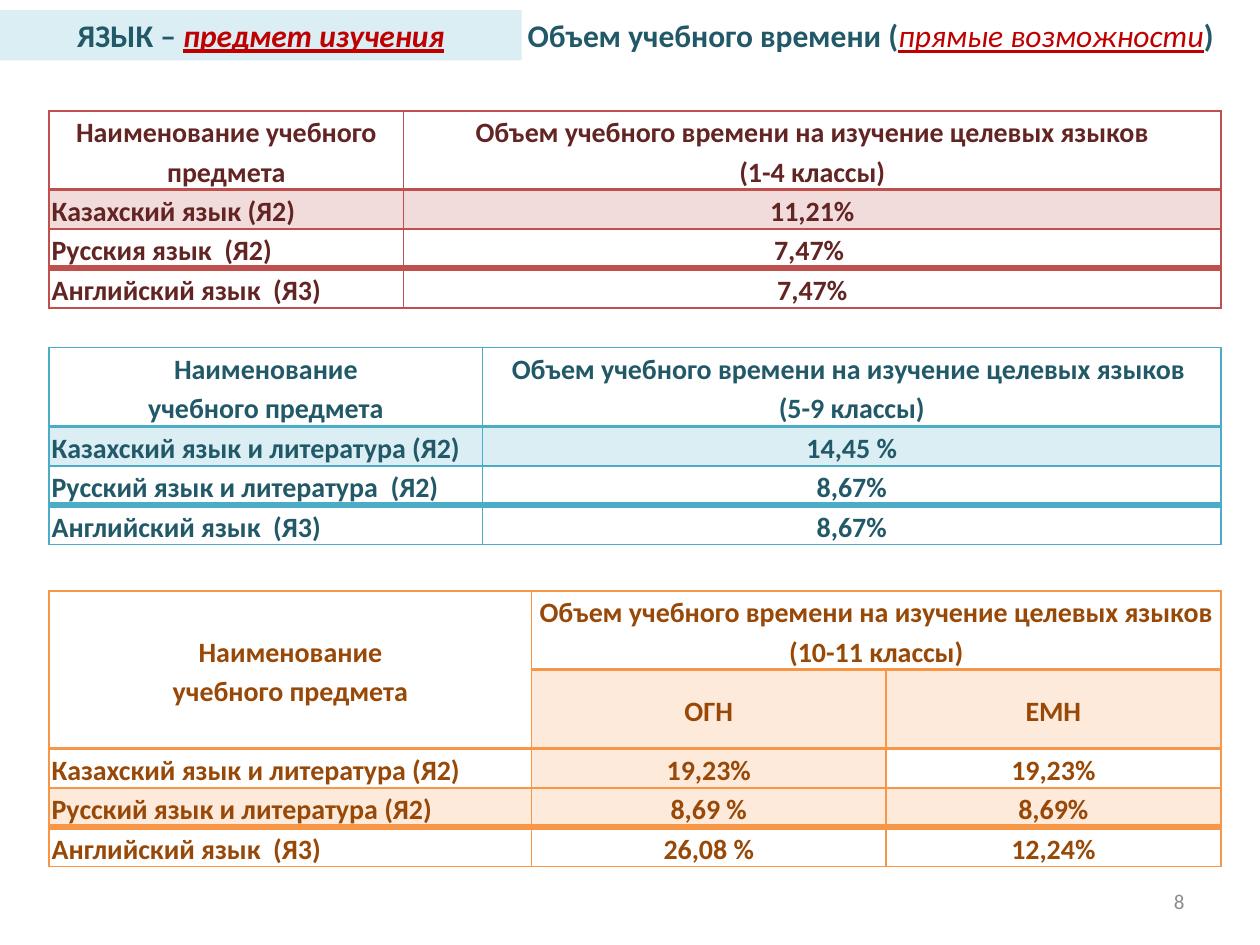
from dataclasses import dataclass

from lxml import etree
from pptx import Presentation
from pptx.dml.color import RGBColor
from pptx.enum.shapes import MSO_SHAPE
from pptx.enum.text import MSO_ANCHOR, PP_ALIGN
from pptx.oxml.ns import qn
from pptx.util import Inches, Pt

LEFT, CENTER, RIGHT = PP_ALIGN.LEFT, PP_ALIGN.CENTER, PP_ALIGN.RIGHT
TOP, MIDDLE = MSO_ANCHOR.TOP, MSO_ANCHOR.MIDDLE
RECTANGLE = MSO_SHAPE.RECTANGLE
TITLE_ONLY = 5


@dataclass(frozen=True)
class Palette:
    text: str
    line: str
    tint: str


@dataclass(frozen=True)
class Theme:
    font: str = "Calibri"
    heading_size: int = 18
    table_size: int = 16
    number_size: int = 12
    accent: str = "C00000"
    number: str = "8C8C8C"
    line_spacing: float = 1.15
    row: float = 0.306
    cell_inset: float = 0.02
    red: Palette = Palette("632523", "C0504D", "F2DCDB")
    teal: Palette = Palette("215968", "4BACC6", "DBEEF4")
    orange: Palette = Palette("984807", "F79646", "FDEADA")


THEME = Theme()


def rgb(code):
    return RGBColor.from_string(code)


def place(shape, box):
    shape.left, shape.top, shape.width, shape.height = map(Inches, box)


def add_run(paragraph, text, size, color, bold=False, emphasis=False):
    run = paragraph.add_run()
    run.text = text
    font = run.font
    font.name, font.size, font.bold = THEME.font, Pt(size), bold
    font.color.rgb = rgb(color)
    if emphasis:
        font.italic = font.underline = True


def heading(shape, box, parts):
    place(shape, box)
    frame = shape.text_frame
    frame.word_wrap = True
    frame.vertical_anchor = TOP
    paragraph = frame.paragraphs[0]
    paragraph.alignment = CENTER
    for text, bold, emphasis in parts:
        color = THEME.accent if emphasis else THEME.teal.text
        add_run(paragraph, text, THEME.heading_size, color, bold, emphasis)


def subject_band(slide, box):
    band = slide.shapes.add_shape(RECTANGLE, *map(Inches, box))
    band.shadow.inherit = False
    band.fill.solid()
    band.fill.fore_color.rgb = rgb(THEME.teal.tint)
    band.line.fill.background()
    heading(band, box, [("ЯЗЫК – ", True, False), ("предмет изучения", True, True)])


def page_number(slide, box, number):
    frame = slide.shapes.add_textbox(*map(Inches, box)).text_frame
    frame.word_wrap = True
    frame.vertical_anchor = MIDDLE
    frame.paragraphs[0].alignment = RIGHT
    add_run(frame.paragraphs[0], number, THEME.number_size, THEME.number)


def set_borders(cell, color, top, bottom):
    properties = cell._tc.get_or_add_tcPr()
    widths = {"a:lnL": 1, "a:lnR": 1, "a:lnT": top, "a:lnB": bottom}
    for index, (tag, width) in enumerate(widths.items()):
        line = etree.Element(qn(tag), w=str(Pt(width)))
        fill = etree.SubElement(line, qn("a:solidFill"))
        etree.SubElement(fill, qn("a:srgbClr"), val=color)
        properties.insert(index, line)


def fill_cell(cell, text, palette, alignment, tinted):
    if tinted:
        cell.fill.solid()
        cell.fill.fore_color.rgb = rgb(palette.tint)
    else:
        cell.fill.background()
    cell.margin_left = cell.margin_right = Inches(THEME.cell_inset)
    cell.margin_top = cell.margin_bottom = 0
    cell.vertical_anchor = MIDDLE
    frame = cell.text_frame
    for index, line in enumerate(text.split("\n")):
        paragraph = frame.add_paragraph() if index else frame.paragraphs[0]
        paragraph.alignment = alignment
        paragraph.line_spacing = THEME.line_spacing
        add_run(paragraph, line, THEME.table_size, palette.text, True)


def hours_table(slide, box, columns, rows, palette, tinted, headers=1):
    left, top, width = box
    units = [2 if r < headers else 1 for r in range(len(rows))]
    edges = [1] + [2] * headers + [1] * (len(rows) - headers - 2) + [4, 1]
    table = slide.shapes.add_table(
        len(rows), len(columns), Inches(left), Inches(top),
        Inches(width), Inches(sum(units) * THEME.row)).table
    table.first_row = table.horz_banding = False
    for column, share in zip(table.columns, columns):
        column.width = Inches(width * share / sum(columns))
    for r, texts in enumerate(rows):
        table.rows[r].height = Inches(units[r] * THEME.row)
        for c, text in enumerate(texts):
            cell = table.cell(r, c)
            alignment = LEFT if c == 0 and r >= headers else CENTER
            fill_cell(cell, text, palette, alignment, (r, c) in tinted)
            set_borders(cell, palette.line, edges[r], edges[r + 1])
    return table


def primary_school(slide, box):
    hours_table(slide, box, [2.81, 6.48], [
        ["Наименование учебного предмета",
         "Объем учебного времени на изучение целевых языков\n(1-4 классы)"],
        ["Казахский язык (Я2)", "11,21%"],
        ["Русския язык  (Я2)", "7,47% "],
        ["Английский язык  (Я3)", "7,47%"],
    ], THEME.red, {(1, 0), (1, 1)})


def middle_school(slide, box):
    hours_table(slide, box, [3.44, 5.86], [
        ["Наименование\nучебного предмета",
         "Объем учебного времени на изучение целевых языков \n(5-9 классы)"],
        ["Казахский язык и литература (Я2)", "14,45 %"],
        ["Русский язык и литература  (Я2)", "8,67%"],
        ["Английский язык  (Я3)", "8,67%"],
    ], THEME.teal, {(1, 0), (1, 1)})


def high_school(slide, box):
    tinted = {(1, 1), (1, 2), (2, 1), (3, 0), (3, 1), (3, 2)}
    table = hours_table(slide, box, [3.83, 2.81, 2.66], [
        ["Наименование\nучебного предмета",
         "Объем учебного времени на изучение целевых языков (10-11 классы)", ""],
        ["", "ОГН", "ЕМН"],
        ["Казахский язык и литература (Я2)", "19,23%", "19,23%"],
        ["Русский язык и литература (Я2)", "8,69 %", "8,69%"],
        ["Английский язык  (Я3)", "26,08 %", "12,24%"],
    ], THEME.orange, tinted, headers=2)
    table.cell(0, 0).merge(table.cell(1, 0))
    table.cell(0, 1).merge(table.cell(0, 2))


def main():
    deck = Presentation()
    deck.slide_width, deck.slide_height = Inches(10), Inches(7.5)
    slide = deck.slides.add_slide(deck.slide_layouts[TITLE_ONLY])
    heading(slide.shapes.title, (3.98, 0.08, 5.86, 0.4), [
        ("Объем учебного времени (", True, False),
        ("прямые возможности", False, True),
        (")", True, False)])
    subject_band(slide, (0, 0.08, 4.14, 0.4))
    left, width = 0.39, 9.3
    stages = [(primary_school, 0.88), (middle_school, 2.76), (high_school, 4.69)]
    for stage, top in stages:
        stage(slide, (left, top, width))
    page_number(slide, (7.17, 6.95, 2.33, 0.4), "8")
    deck.save("out.pptx")


if __name__ == "__main__":
    main()
